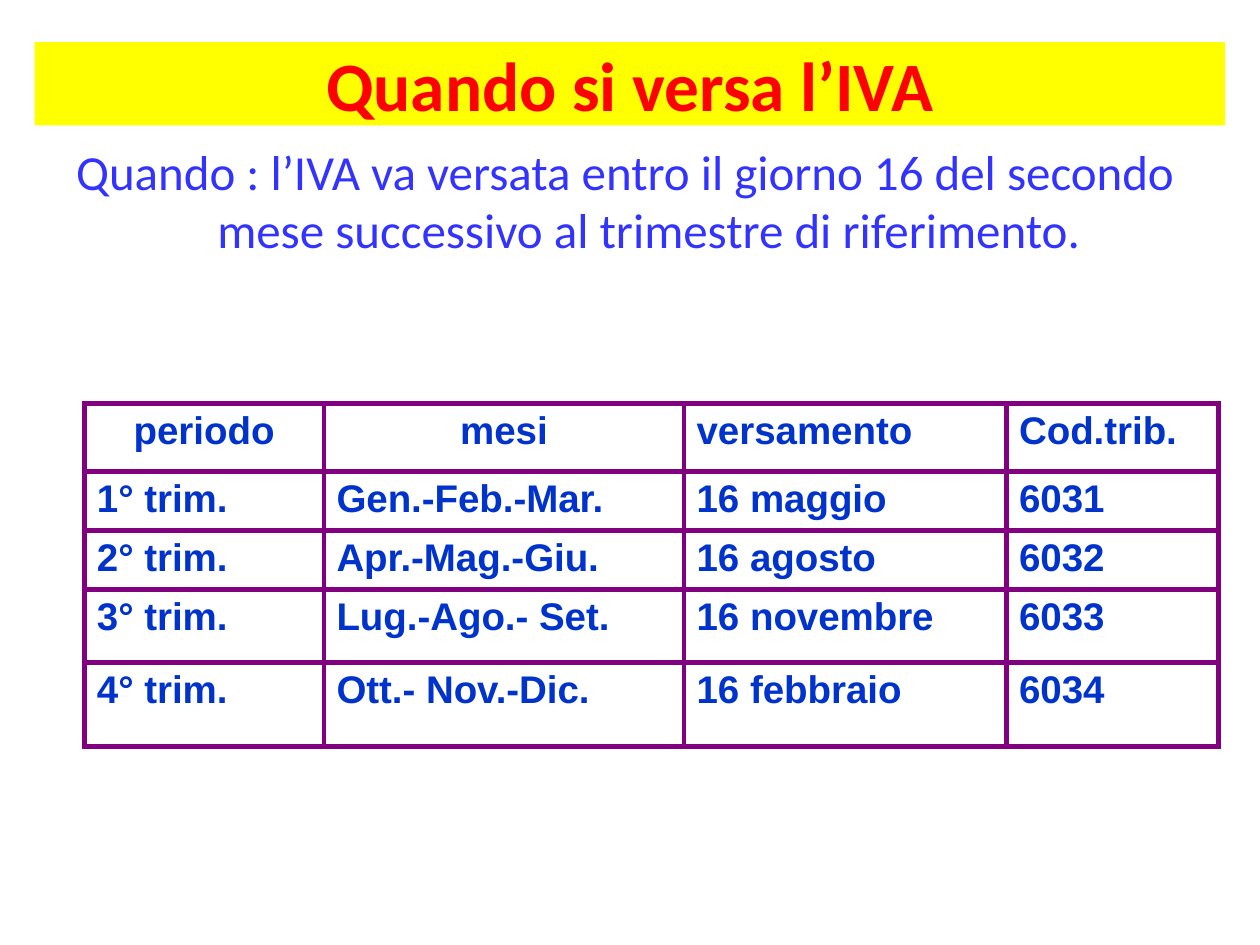
from dataclasses import dataclass

from lxml.etree import SubElement
from pptx import Presentation
from pptx.dml.color import RGBColor
from pptx.enum.text import MSO_ANCHOR as Anchor, MSO_AUTO_SIZE as AutoSize, PP_ALIGN as Align
from pptx.oxml.ns import qn
from pptx.util import Cm, Pt


@dataclass(frozen=True)
class Theme:
    """Colours, fonts and type sizes of the slide."""
    banner: str = "FFFF00"
    title: str = "FF0000"
    rule: str = "3333FF"
    cell: str = "0033CC"
    border: str = "800080"
    text_font: str = "Calibri"
    table_font: str = "Arial"
    title_size: float = 39.6
    rule_size: float = 28
    cell_size: float = 22
    border_width: float = 3


THEME = Theme()
HEADERS = ("periodo", "mesi", "versamento", "Cod.trib.")
QUARTERS = (
    ("1° trim.", "Gen.-Feb.-Mar.", "16 maggio", "6031"),
    ("2° trim.", "Apr.-Mag.-Giu.", "16 agosto", "6032"),
    ("3° trim.", "Lug.-Ago.- Set.", "16 novembre", "6033"),
    ("4° trim.", "Ott.- Nov.-Dic.", "16 febbraio", "6034"),
)
COLUMN_WIDTHS = (4.83, 7.26, 6.5, 4.27)
ROW_HEIGHTS = (1.37, 1.19, 1.19, 1.47, 1.7)


def write_text(frame, text, *, font, size, color, bold=False, align=Align.LEFT):
    """Write one formatted paragraph and return it."""
    para = frame.paragraphs[0]
    para.alignment = align
    span = para.add_run()
    span.text = text
    span.font.name = font
    span.font.size = Pt(size)
    span.font.bold = bold
    span.font.color.rgb = RGBColor.from_string(color)
    return para


def place_title(page, left, top, width, height):
    """Place the title placeholder as a coloured banner."""
    title = page.shapes.title
    title.left, title.top, title.width, title.height = left, top, width, height
    title.fill.solid()
    title.fill.fore_color.rgb = RGBColor.from_string(THEME.banner)
    frame = title.text_frame
    frame.auto_size = AutoSize.NONE
    frame.vertical_anchor = Anchor.MIDDLE
    write_text(frame, "Quando si versa l’IVA", font=THEME.text_font,
               size=THEME.title_size, color=THEME.title, bold=True, align=Align.CENTER)


def place_rule(page, left, top, width, height):
    """Place the payment rule with its hanging indent."""
    box = page.shapes.add_textbox(left, top, width, height)
    box.text_frame.word_wrap = True
    para = write_text(
        box.text_frame,
        "Quando : l’IVA va versata entro il giorno 16 del secondo mese "
        "successivo al trimestre di riferimento.",
        font=THEME.text_font, size=THEME.rule_size, color=THEME.rule, align=Align.CENTER)
    properties = para._p.get_or_add_pPr()
    properties.set("marL", str(Cm(0.95)))
    properties.set("indent", str(-Cm(0.95)))


def draw_borders(cell):
    """Draw the four borders of a cell and leave it unfilled."""
    properties = cell._tc.get_or_add_tcPr()
    for side in ("lnL", "lnR", "lnT", "lnB"):
        line = SubElement(properties, qn(f"a:{side}"), w=str(Pt(THEME.border_width)))
        fill = SubElement(line, qn("a:solidFill"))
        SubElement(fill, qn("a:srgbClr"), val=THEME.border)
    cell.fill.background()


def place_schedule(page, left, top, width, height):
    """Place the table of quarterly payments, scaled to its box."""
    rows = (HEADERS, *QUARTERS)
    table = page.shapes.add_table(len(rows), len(HEADERS), left, top, width, height).table
    table.first_row = table.horz_banding = False
    for column, share in zip(table.columns, COLUMN_WIDTHS):
        column.width = int(width * share / sum(COLUMN_WIDTHS))
    for row, share in zip(table.rows, ROW_HEIGHTS):
        row.height = int(height * share / sum(ROW_HEIGHTS))
    for row_index, texts in enumerate(rows):
        for column_index, text in enumerate(texts):
            cell = table.cell(row_index, column_index)
            centred = row_index == 0 and column_index < 2
            write_text(cell.text_frame, text, font=THEME.table_font,
                       size=THEME.cell_size, color=THEME.cell, bold=True,
                       align=Align.CENTER if centred else Align.LEFT)
            draw_borders(cell)


def main():
    """Build the slide and save the deck."""
    deck = Presentation()
    deck.slide_width, deck.slide_height = Cm(25.4), Cm(19.05)
    page = deck.slides.add_slide(deck.slide_layouts[5])
    place_title(page, Cm(0.7), Cm(0.85), Cm(24), Cm(1.68))
    place_rule(page, Cm(0.7), Cm(2.72), Cm(23.8), Cm(4))
    place_schedule(page, Cm(1.7), Cm(8.13), Cm(22.86), Cm(6.92))
    deck.save("out.pptx")


if __name__ == "__main__":
    main()
